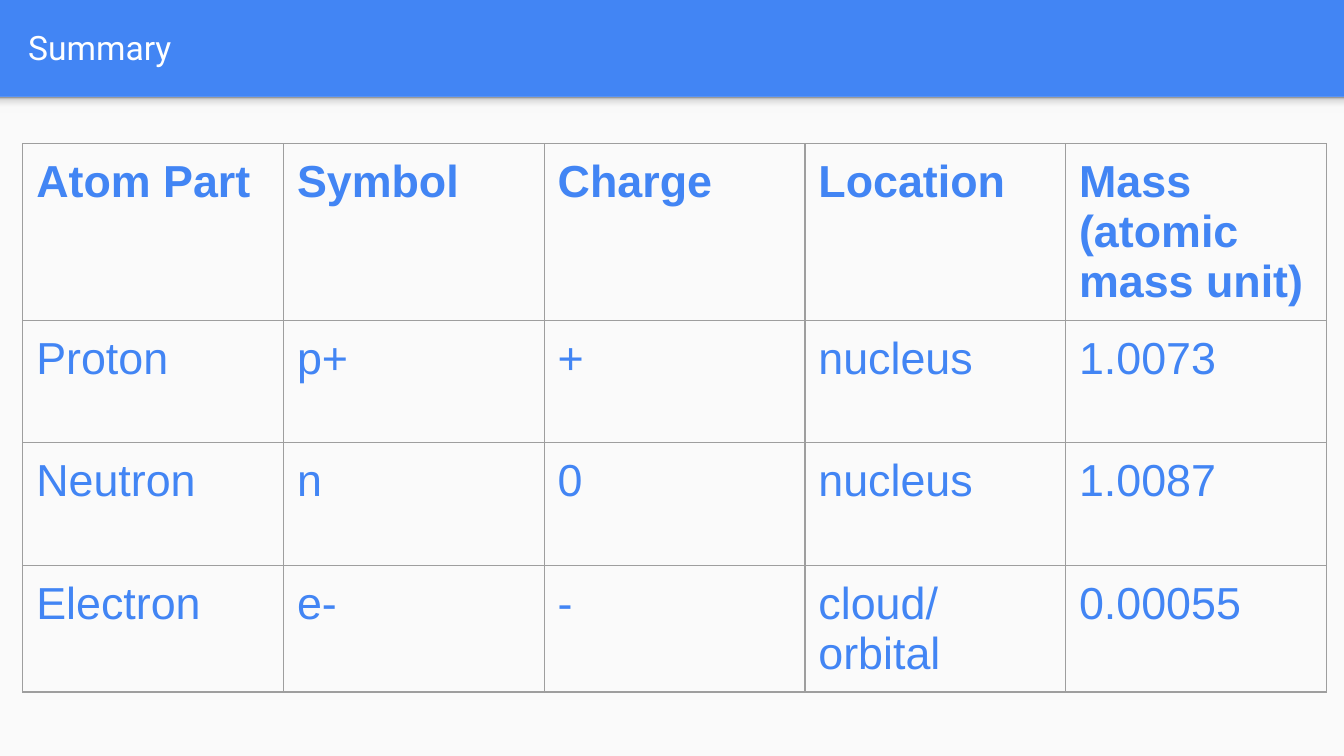
from pptx import Presentation
from pptx.dml.color import RGBColor
from pptx.enum.shapes import MSO_SHAPE
from pptx.enum.text import MSO_ANCHOR, PP_ALIGN
from pptx.oxml import parse_xml
from pptx.oxml.ns import nsdecls
from pptx.util import Inches, Pt

RECTANGLE = MSO_SHAPE.RECTANGLE
MIDDLE = MSO_ANCHOR.MIDDLE
LEFT = PP_ALIGN.LEFT
TITLE_ONLY = 5

BLUE = RGBColor(0x42, 0x85, 0xF4)
WHITE = RGBColor(0xFF, 0xFF, 0xFF)
PAPER = RGBColor(0xFA, 0xFA, 0xFA)
BORDER_GRAY = RGBColor(0x9E, 0x9E, 0x9E)
SHADE_LIGHT = RGBColor(0xF9, 0xF9, 0xF9)
SHADE_MIDDLE = RGBColor(0xDE, 0xDE, 0xDE)
SHADE_DARK = RGBColor(0x99, 0x99, 0x99)
SHADE_STOPS = [(0, SHADE_LIGHT), (36, SHADE_LIGHT), (80, SHADE_MIDDLE), (100, SHADE_DARK)]

# Widescreen, 16:9
SLIDE_WIDTH = Inches(10)
SLIDE_HEIGHT = SLIDE_WIDTH * 9 // 16
HEADER_HEIGHT = Inches(0.72)
INSET = Inches(0.1)
COLUMN_WIDTH, ROW_HEIGHT = Inches(1.94), Inches(0.91)

ROWS = [
    ["Atom Part", "Symbol", "Charge", "Location", "Mass (atomic mass unit)"],
    ["Proton", "p+", "+", "nucleus", "1.0073"],
    ["Neutron", "n", "0", "nucleus", "1.0087"],
    ["Electron", "e-", "-", "cloud/ orbital", "0.00055"],
]


def set_insets(holder):
    holder.margin_left = holder.margin_right = INSET
    holder.margin_top = holder.margin_bottom = INSET


def set_font(font, name, size, color, bold=False):
    font.name, font.size, font.bold = name, Pt(size), bold
    font.color.rgb = color


def add_band(slide, height):
    """Add a full-width plain band just below the header."""
    band = slide.shapes.add_shape(RECTANGLE, 0, HEADER_HEIGHT, SLIDE_WIDTH, height)
    band.shadow.inherit = False
    band.line.fill.background()
    band.fill.solid()
    band.fill.fore_color.rgb = PAPER
    return band


def shade_upward(band):
    """Replace the solid fill by a gradient that darkens towards the top."""
    stops = "".join(
        f'<a:gs pos="{percent * 1000}"><a:srgbClr val="{color}"/></a:gs>'
        for percent, color in SHADE_STOPS
    )
    gradient = parse_xml(
        f'<a:gradFill {nsdecls("a")}><a:gsLst>{stops}</a:gsLst>'
        '<a:lin ang="16200000" scaled="0"/></a:gradFill>'
    )
    properties = band.element.spPr
    properties.replace(properties.find("{*}solidFill"), gradient)


def format_title(slide, text):
    title = slide.shapes.title
    title.left, title.top = Inches(0.11), Inches(0.02)
    title.width, title.height = Inches(9.65), Inches(0.66)
    frame = title.text_frame
    frame.text = text
    frame.vertical_anchor = MIDDLE
    set_insets(frame)
    paragraph = frame.paragraphs[0]
    paragraph.alignment = LEFT
    set_font(paragraph.font, "Roboto", 18, WHITE)


def add_borders(cell):
    properties = cell._tc.get_or_add_tcPr()
    for side in ("lnL", "lnR", "lnT", "lnB"):
        properties.append(parse_xml(
            f'<a:{side} {nsdecls("a")} w="{Pt(0.75)}"><a:solidFill>'
            f'<a:srgbClr val="{BORDER_GRAY}"/></a:solidFill></a:{side}>'
        ))


def fill_cell(cell, text, bold):
    cell.text = text
    set_insets(cell)
    add_borders(cell)
    cell.fill.background()
    set_font(cell.text_frame.paragraphs[0].font, "Arial", 24, BLUE, bold)


def add_summary_table(slide):
    row_count, column_count = len(ROWS), len(ROWS[0])
    table = slide.shapes.add_table(
        row_count, column_count, Inches(0.17), Inches(1.07),
        COLUMN_WIDTH * column_count, ROW_HEIGHT * row_count,
    ).table
    table.first_row = table.horz_banding = False
    for column in table.columns:
        column.width = COLUMN_WIDTH
    for row_index, texts in enumerate(ROWS):
        table.rows[row_index].height = ROW_HEIGHT
        for column_index, text in enumerate(texts):
            fill_cell(table.cell(row_index, column_index), text, bold=row_index == 0)


def main():
    presentation = Presentation()
    presentation.slide_width, presentation.slide_height = SLIDE_WIDTH, SLIDE_HEIGHT
    slide = presentation.slides.add_slide(presentation.slide_layouts[TITLE_ONLY])

    # Blue header over a light page, with a soft edge between them
    slide.background.fill.solid()
    slide.background.fill.fore_color.rgb = BLUE
    add_band(slide, SLIDE_HEIGHT - HEADER_HEIGHT)
    shade_upward(add_band(slide, Inches(0.12)))

    # Content
    format_title(slide, "Summary")
    add_summary_table(slide)
    presentation.save("out.pptx")


if __name__ == "__main__":
    main()
